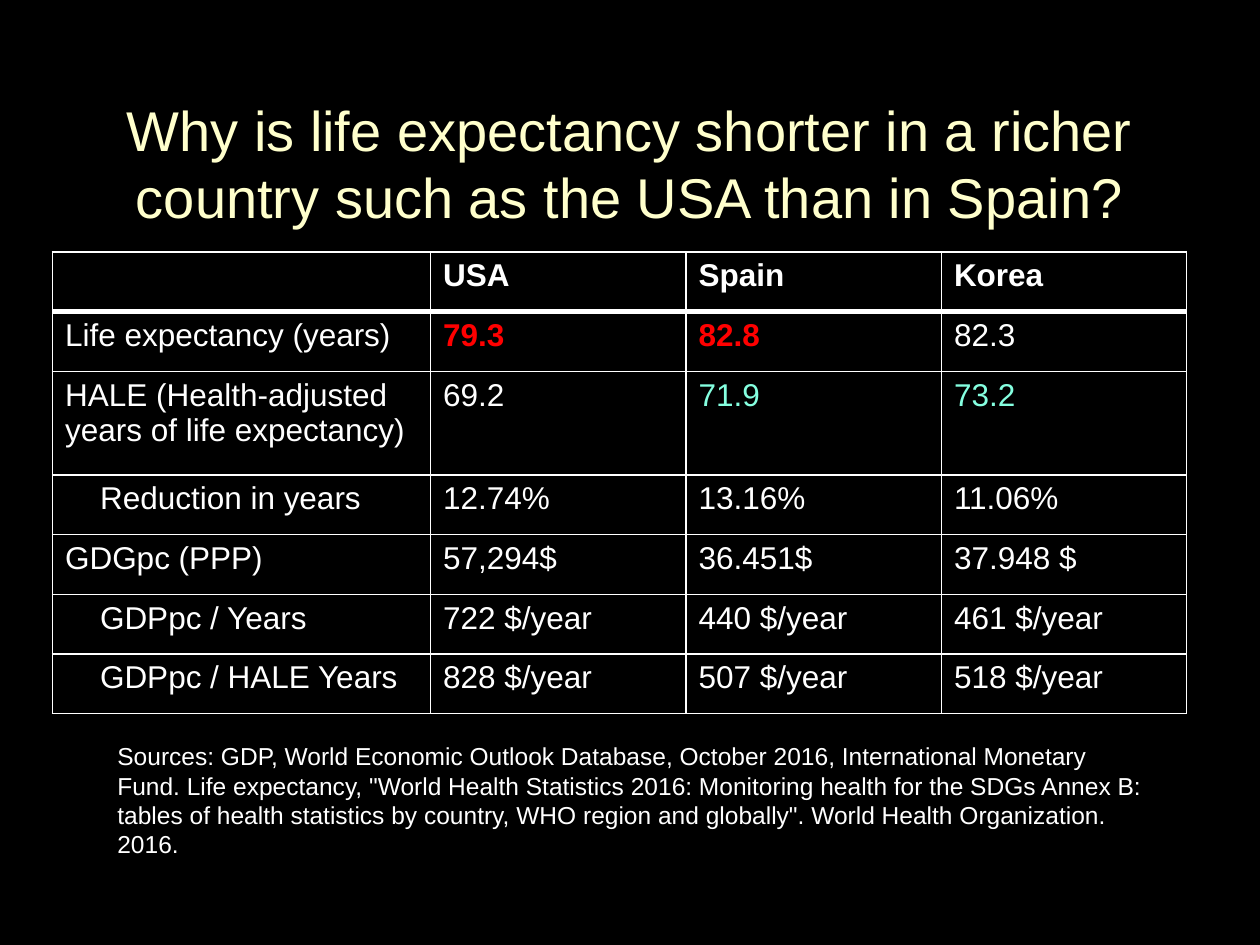
from pptx import Presentation
from pptx.dml.color import RGBColor
from pptx.enum.text import MSO_ANCHOR, PP_ALIGN
from pptx.oxml.ns import qn
from pptx.util import Pt
from lxml.etree import SubElement

COLORS = {
    "background": "000000",
    "title": "FFFFCC",
    "text": "FFFFFF",
    "highlight": "FF0000",
    "accent": "85FFE0",
}
FONT = "Arial"
CELL_MARGIN = 7.2
INDENT = 20

TITLE = ("Why is life expectancy shorter in a richer country "
         "such as the USA than in Spain?")
SOURCES = ("Sources: GDP, World Economic Outlook Database, October 2016, "
           "International Monetary Fund. Life expectancy, \"World Health "
           "Statistics 2016: Monitoring health for the SDGs Annex B: tables "
           "of health statistics by country, WHO region and globally\". "
           "World Health Organization. 2016.")

ROWS = [
    ["", "USA", "Spain", "Korea"],
    ["Life expectancy (years)", "79.3", "82.8", "82.3"],
    ["HALE (Health-adjusted years of life expectancy)", "69.2", "71.9", "73.2"],
    ["Reduction in years", "12.74%", "13.16%", "11.06%"],
    ["GDGpc (PPP)", "57,294$", "36.451$", "37.948 $"],
    ["GDPpc / Years", "722 $/year", "440 $/year", "461 $/year"],
    ["GDPpc / HALE Years", "828 $/year", "507 $/year", "518 $/year"],
]
INDENTED_ROWS = {3, 5, 6}
CELL_COLORS = {(1, 1): "highlight", (1, 2): "highlight",
               (2, 2): "accent", (2, 3): "accent"}
COLUMN_WIDTHS = [216, 146, 146, 140]
ROW_HEIGHTS = [34.15, 34.15, 59.1] + [34.15] * 4


class SlideBuilder:
    def __init__(self, prs):
        self.slide = prs.slides.add_slide(prs.slide_layouts[6])
        fill = self.slide.background.fill
        fill.solid()
        fill.fore_color.rgb = self.color("background")

    def color(self, name):
        return RGBColor.from_string(COLORS[name])

    def run(self, p, text, size, color="text", bold=False):
        r = p.add_run()
        r.text = text
        r.font.name = FONT
        r.font.size = Pt(size)
        r.font.bold = bold
        r.font.color.rgb = self.color(color)

    def text(self, box, text, size, color="text",
             align=PP_ALIGN.LEFT, anchor=MSO_ANCHOR.TOP):
        tf = self.slide.shapes.add_textbox(*map(Pt, box)).text_frame
        tf.word_wrap = True
        tf.vertical_anchor = anchor
        p = tf.paragraphs[0]
        p.alignment = align
        self.run(p, text, size, color)

    def border(self, cell, side, width):
        """Draw one cell edge; side is L, R, T or B."""
        ln = SubElement(cell._tc.get_or_add_tcPr(), qn(f"a:ln{side}"),
                        w=str(Pt(width)))
        fill = SubElement(ln, qn("a:solidFill"))
        SubElement(fill, qn("a:srgbClr"), val=COLORS["text"])

    def table(self, left, top, rows, widths, heights, size):
        frame = self.slide.shapes.add_table(
            len(rows), len(widths), Pt(left), Pt(top),
            Pt(sum(widths)), Pt(sum(heights)))
        table = frame.table
        for column, width in zip(table.columns, widths):
            column.width = Pt(width)
        for row, height in zip(table.rows, heights):
            row.height = Pt(height)
        for i, values in enumerate(rows):
            for j, value in enumerate(values):
                self.cell(table.cell(i, j), i, j, value, size)

    def cell(self, cell, i, j, value, size):
        if j == 0 and i in INDENTED_ROWS:
            cell.margin_left = Pt(CELL_MARGIN + INDENT)
        edges = {"L": 1, "R": 1, "T": 3 if i == 1 else 1, "B": 3 if i == 0 else 1}
        for side, width in edges.items():
            self.border(cell, side, width)
        cell.fill.background()
        if value:
            color = CELL_COLORS.get((i, j), "text")
            self.run(cell.text_frame.paragraphs[0], value, size, color,
                     bold=i == 0 or color == "highlight")


def main():
    prs = Presentation()
    prs.slide_width, prs.slide_height = Pt(720), Pt(540)
    s = SlideBuilder(prs)
    s.text((54, 48, 612, 90), TITLE, 32, "title",
           PP_ALIGN.CENTER, MSO_ANCHOR.MIDDLE)
    s.table(30, 144, ROWS, COLUMN_WIDTHS, ROW_HEIGHTS, 18)
    s.text((60, 420, 606, 58), SOURCES, 14)
    prs.save("out.pptx")


if __name__ == "__main__":
    main()
